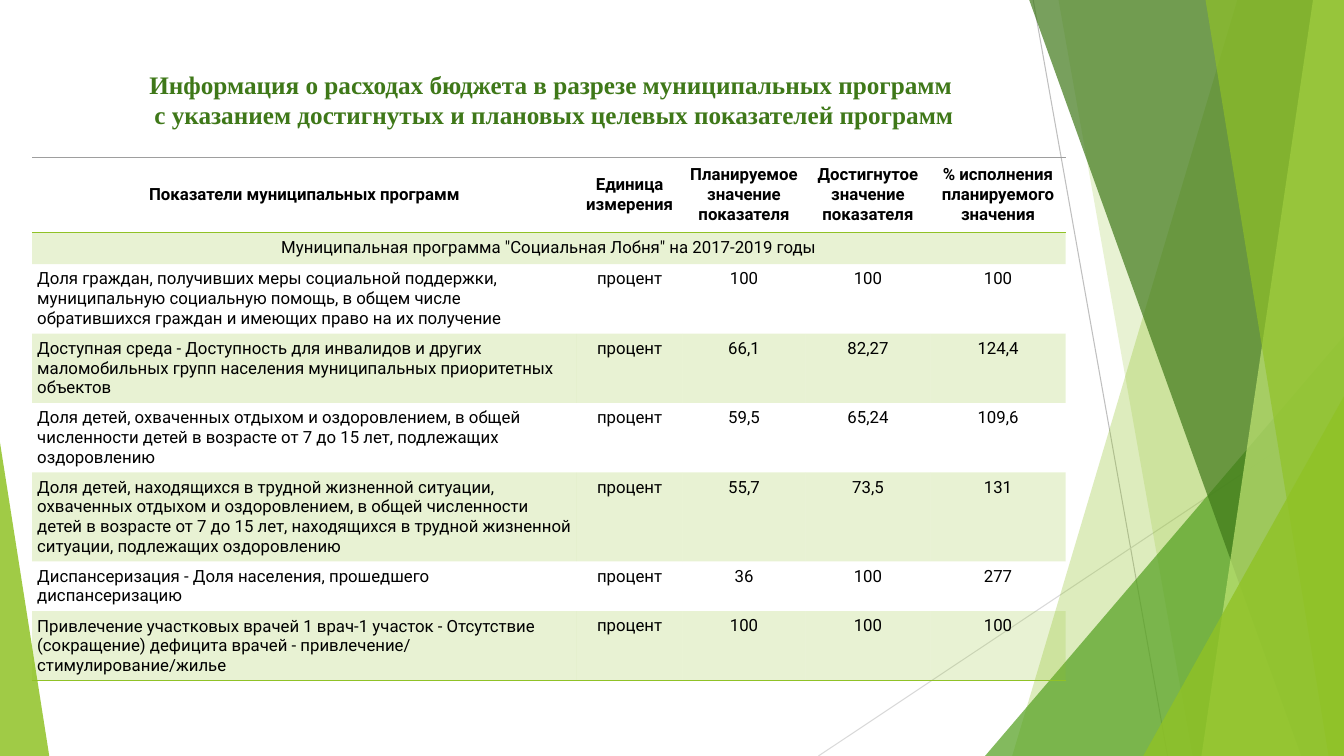
from lxml import etree
from pptx import Presentation
from pptx.dml.color import RGBColor
from pptx.enum.shapes import MSO_CONNECTOR, MSO_SHAPE
from pptx.enum.text import MSO_ANCHOR, PP_ALIGN
from pptx.oxml.ns import qn
from pptx.util import Pt

STRAIGHT = MSO_CONNECTOR.STRAIGHT
TRIANGLE = MSO_SHAPE.ISOSCELES_TRIANGLE
TOP, MIDDLE = MSO_ANCHOR.TOP, MSO_ANCHOR.MIDDLE
LEFT, CENTER = PP_ALIGN.LEFT, PP_ALIGN.CENTER

LIME = RGBColor(0x90, 0xC2, 0x26)
PALE_LIME = RGBColor(0xC0, 0xE4, 0x74)
GREEN = RGBColor(0x54, 0xA0, 0x21)
DARK_GREEN = RGBColor(0x3F, 0x78, 0x19)
BLACK = RGBColor(0, 0, 0)
GREY = RGBColor(0x9E, 0x9E, 0x9E)
SILVER = RGBColor(0xBF, 0xBF, 0xBF)
LIGHT_GREY = RGBColor(0xD9, 0xD9, 0xD9)

WIDTH, HEIGHT = 960, 540
BLEED = -0.6

TITLE = ("Информация о расходах бюджета в разрезе муниципальных программ\v"
         " с указанием достигнутых и плановых целевых показателей программ")
HEADERS = ["Показатели муниципальных программ", "Единица измерения",
           "Планируемое значение показателя", "Достигнутое значение показателя",
           "% исполнения планируемого значения"]
PROGRAM = 'Муниципальная программа "Социальная Лобня" на 2017-2019 годы'
UNIT = "процент"
INDICATORS = [
    ("Доля граждан, получивших меры социальной поддержки, муниципальную социальную помощь, "
     "в общем числе обратившихся граждан и имеющих право на их получение",
     UNIT, "100", "100", "100"),
    ("Доступная среда - Доступность для инвалидов и других маломобильных групп населения "
     "муниципальных приоритетных объектов", UNIT, "66,1", "82,27", "124,4"),
    ("Доля детей, охваченных отдыхом и оздоровлением, в общей численности детей в возрасте "
     "от 7 до 15 лет, подлежащих оздоровлению", UNIT, "59,5", "65,24", "109,6"),
    ("Доля детей, находящихся в трудной жизненной ситуации, охваченных отдыхом и "
     "оздоровлением, в общей численности детей в возрасте от 7 до 15 лет, находящихся "
     "в трудной жизненной ситуации, подлежащих оздоровлению", UNIT, "55,7", "73,5", "131"),
    ("Диспансеризация - Доля населения, прошедшего диспансеризацию",
     UNIT, "36", "100", "277"),
    ("Привлечение участковых врачей 1 врач-1 участок - Отсутствие (сокращение) дефицита "
     "врачей - привлечение/ стимулирование/жилье", UNIT, "100", "100", "100"),
]
ROWS = [HEADERS, (PROGRAM, "", "", "", "")] + INDICATORS
COLUMN_WIDTHS = [389, 75.6, 87.8, 89.3, 96.5]
ROW_HEIGHTS = [53.6, 22.8, 49.6, 49.6, 49.6, 63.6, 35.6, 49.6]
TABLE_LEFT, TABLE_TOP = 23, 112.3
NO_STYLE = "{2D5ABB26-0587-4C30-8999-92F81FD0307C}"

RAYS = [((738, 0), (834, HEIGHT), SILVER), ((WIDTH, 290), (584.6, HEIGHT), LIGHT_GREY)]
BACK_BANDS = [(884, 723, LIME, 30), (756, 851.8, LIME, 20)]
FRONT_BANDS = [(735, 929.5, DARK_GREEN, 70), (938, 858.2, PALE_LIME, 70),
               (861, 949, LIME, 65)]
MIDDLE_WEDGE = (703.6, 240, WIDTH, 1, GREEN, 72)
FRONT_WEDGES = [(816.6, 283, WIDTH, 1, LIME, 80), (0, 316, 35.2, 0, LIME, 85)]


def fill_with(item, color, opacity):
    item.fill.solid()
    item.fill.fore_color.rgb = color
    for tint in item._element.iter(qn("a:srgbClr")):
        etree.SubElement(tint, qn("a:alpha"), val=str(opacity * 1000))


def paint(shape, color, opacity):
    shape.shadow.inherit = False
    shape.line.fill.background()
    fill_with(shape, color, opacity)


def add_ray(page, start, end, color):
    ray = page.shapes.add_connector(STRAIGHT, *(Pt(value) for value in start + end))
    ray.line.color.rgb = color
    ray.line.width = Pt(0.75)
    etree.SubElement(ray._element.spPr, qn("a:effectLst"))


def add_band(page, top_left, bottom_left, color, opacity):
    builder = page.shapes.build_freeform(Pt(top_left), Pt(BLEED))
    corners = [(WIDTH, BLEED), (WIDTH, HEIGHT), (bottom_left, HEIGHT)]
    builder.add_line_segments([(Pt(x), Pt(y)) for x, y in corners], close=True)
    paint(builder.convert_to_shape(), color, opacity)


def add_wedge(page, left, top, right, apex, color, opacity):
    wedge = page.shapes.add_shape(TRIANGLE, Pt(left), Pt(top), Pt(right - left),
                                  Pt(HEIGHT - top))
    wedge.adjustments[0] = apex
    paint(wedge, color, opacity)


def format_text(frame, alignment, font_name, size, color, bold):
    for para in frame.paragraphs:
        para.alignment = alignment
        for span in para.runs:
            span.font.name = font_name
            span.font.size = Pt(size)
            span.font.color.rgb = color
            span.font.bold = bold


def add_border(cell, side, color):
    properties = cell._tc.get_or_add_tcPr()
    edge = etree.SubElement(properties, qn("a:" + side), w=str(Pt(1)))
    solid = etree.SubElement(edge, qn("a:solidFill"))
    etree.SubElement(solid, qn("a:srgbClr"), val=str(color))


def fill_cell(cell, text, row, column):
    header = row == 0
    cell.text_frame.text = text
    cell.margin_left = cell.margin_right = Pt(3.6)
    cell.margin_top = cell.margin_bottom = Pt(3.6)
    cell.vertical_anchor = MIDDLE if row < 2 or column == 0 else TOP
    alignment = LEFT if row > 1 and column == 0 else CENTER
    format_text(cell.text_frame, alignment, "Roboto", 12, BLACK, header)
    if header:
        add_border(cell, "lnT", GREY)
    if row in (0, len(ROWS) - 1):
        add_border(cell, "lnB", LIME)
    if row % 2:
        cell.fill.solid()
        cell.fill.fore_color.rgb = LIME
        tint = cell._tc.tcPr.find(qn("a:solidFill")).find(qn("a:srgbClr"))
        etree.SubElement(tint, qn("a:alpha"), val="20000")
    else:
        cell.fill.background()


def add_indicator_table(page):
    frame = page.shapes.add_table(len(ROWS), len(HEADERS), Pt(TABLE_LEFT), Pt(TABLE_TOP),
                                  Pt(sum(COLUMN_WIDTHS)), Pt(sum(ROW_HEIGHTS)))
    table = frame.table
    table._tbl.tblPr.find(qn("a:tableStyleId")).text = NO_STYLE
    for column, width in zip(table.columns, COLUMN_WIDTHS):
        column.width = Pt(width)
    for row, height in zip(table.rows, ROW_HEIGHTS):
        row.height = Pt(height)
    for row, texts in enumerate(ROWS):
        for column, text in enumerate(texts):
            fill_cell(table.cell(row, column), text, row, column)
    table.cell(1, 0).merge(table.cell(1, len(HEADERS) - 1))


def add_title(page):
    title = page.shapes.title
    title.left, title.top, title.width, title.height = Pt(48), Pt(46), Pt(691), Pt(57.6)
    title.text_frame.text = TITLE
    title.text_frame.vertical_anchor = TOP
    format_text(title.text_frame, CENTER, "Times New Roman", 18, DARK_GREEN, True)


def main():
    deck = Presentation()
    deck.slide_width, deck.slide_height = Pt(WIDTH), Pt(HEIGHT)
    page = deck.slides.add_slide(deck.slide_layouts[5])
    for ray in RAYS:
        add_ray(page, *ray)
    for band in BACK_BANDS:
        add_band(page, *band)
    add_wedge(page, *MIDDLE_WEDGE)
    for band in FRONT_BANDS:
        add_band(page, *band)
    for wedge in FRONT_WEDGES:
        add_wedge(page, *wedge)
    add_title(page)
    add_indicator_table(page)
    deck.save("out.pptx")


if __name__ == "__main__":
    main()
